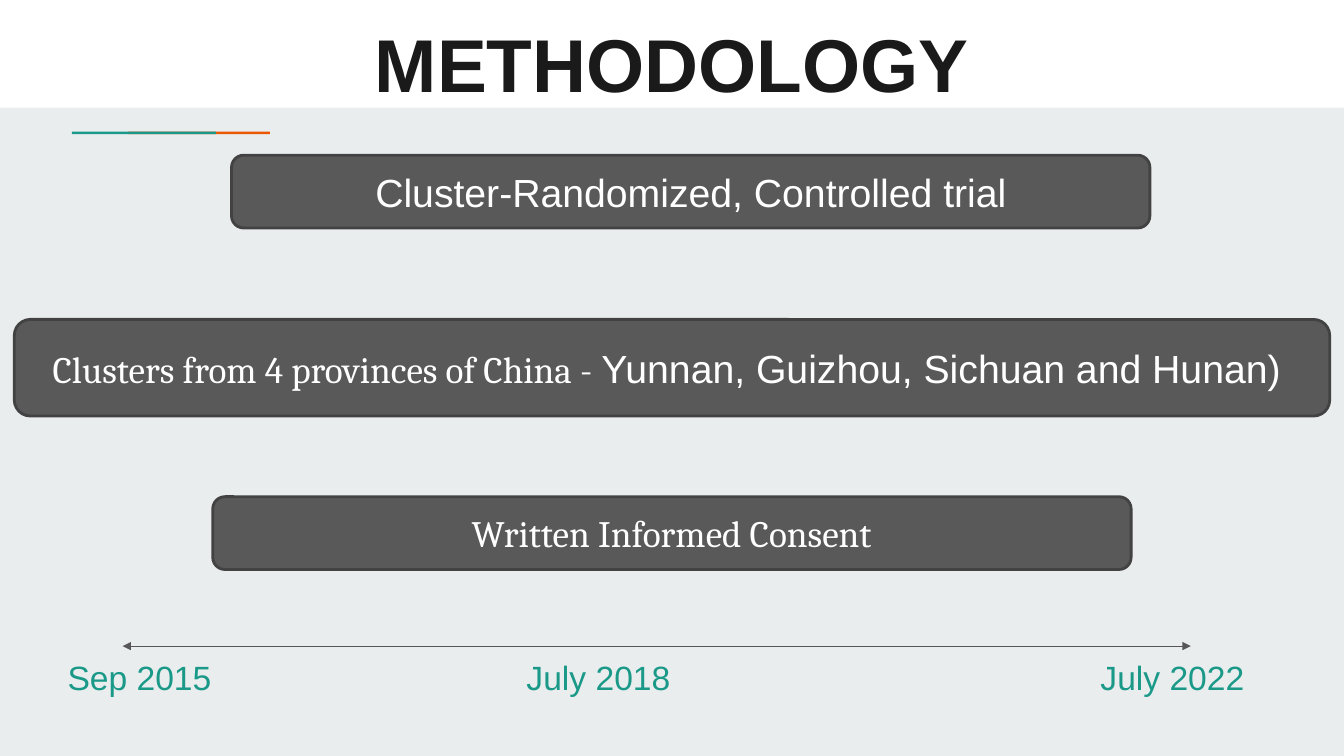
"""Build the methodology slide with its three steps and the study timeline."""
from dataclasses import dataclass
from lxml.etree import SubElement
from pptx import Presentation
from pptx.dml.color import RGBColor
from pptx.enum.shapes import MSO_CONNECTOR as Link, MSO_SHAPE as Form
from pptx.enum.text import MSO_ANCHOR as Anchor, PP_ALIGN as Align
from pptx.oxml.ns import qn
from pptx.shapes.autoshape import Shape
from pptx.slide import Slide
from pptx.text.text import TextFrame
from pptx.util import Pt

WHITE = RGBColor(0xFF, 0xFF, 0xFF)
MIST = RGBColor(0xE9, 0xED, 0xEE)
INK = RGBColor(0x1A, 0x1A, 0x1A)
TEAL = RGBColor(0x1A, 0x99, 0x88)
ORANGE = RGBColor(0xEB, 0x56, 0x00)
GREY = RGBColor(0x59, 0x59, 0x59)
EDGE = RGBColor(0x42, 0x42, 0x42)
ARROW = RGBColor(0x57, 0x57, 0x57)


@dataclass(frozen=True)
class Box:
    left: float
    top: float
    width: float
    height: float


@dataclass(frozen=True)
class Run:
    text: str
    size: float
    font: str = "Arial"
    bold: bool = False


@dataclass(frozen=True)
class Bar:
    box: Box
    fill: RGBColor


@dataclass(frozen=True)
class Step:
    box: Box
    runs: tuple[Run, ...]


@dataclass(frozen=True)
class Date:
    left: float
    text: str


BARS = (
    Bar(Box(0, 0, 960, 77), WHITE),
    Bar(Box(91.4, 94, 101.4, 1.9), ORANGE),
    Bar(Box(51.4, 94, 102.9, 1.9), TEAL),
)
STEPS = (
    Step(Box(165.4, 110.9, 656, 52),
         (Run("Cluster-Randomized, Controlled trial", 28),)),
    Step(Box(10.2, 228.2, 939.6, 69),
         (Run("Clusters from 4 provinces of China - ", 26.6, "Cambria"),
          Run("Yunnan, Guizhou, Sichuan and Hunan) ", 28))),
    Step(Box(152, 354.8, 656, 52),
         (Run("Written Informed Consent", 26.6, "Cambria"),)),
)
DATES = (Date(41.2, "Sep 2015"), Date(369, "July 2018"), Date(779, "July 2022"))


def span(box: Box) -> tuple[Pt, Pt, Pt, Pt]:
    """Turn a box into lengths in points."""
    return Pt(box.left), Pt(box.top), Pt(box.width), Pt(box.height)


def write(frame: TextFrame, runs: tuple[Run, ...], color: RGBColor, align: Align) -> None:
    """Fill the first paragraph run by run."""
    frame.word_wrap = True
    para = frame.paragraphs[0]
    para.alignment = align
    for part in runs:
        run = para.add_run()
        run.text = part.text
        font = run.font
        font.size, font.name, font.bold = Pt(part.size), part.font, part.bold
        font.color.rgb = color


def panel(slide: Slide, form: Form, box: Box, fill: RGBColor) -> Shape:
    """Add a flat filled shape with no outline."""
    shape = slide.shapes.add_shape(form, *span(box))
    shape.shadow.inherit = False
    shape.fill.solid()
    shape.fill.fore_color.rgb = fill
    shape.line.fill.background()
    return shape


def title(slide: Slide) -> None:
    """Add the slide heading."""
    frame = slide.shapes.add_textbox(*span(Box(76.3, 0, 807, 86.4))).text_frame
    frame.margin_left = frame.margin_right = Pt(9.6)
    frame.margin_top = frame.margin_bottom = Pt(9.6)
    frame.vertical_anchor = Anchor.BOTTOM
    write(frame, (Run("METHODOLOGY", 53.4, bold=True),), INK, Align.CENTER)


def card(slide: Slide, step: Step) -> None:
    """Add one rounded step."""
    shape = panel(slide, Form.ROUNDED_RECTANGLE, step.box, GREY)
    shape.line.color.rgb = EDGE
    shape.line.width = Pt(2)
    shape.text_frame.vertical_anchor = Anchor.MIDDLE
    write(shape.text_frame, step.runs, WHITE, Align.CENTER)


def axis(slide: Slide) -> None:
    """Add the timeline with an arrowhead at each end."""
    line = slide.shapes.add_connector(
        Link.STRAIGHT, Pt(87.6), Pt(461.5), Pt(850.6), Pt(461.5))
    line.line.color.rgb = ARROW
    line.line.width = Pt(0.75)
    for end in ("a:headEnd", "a:tailEnd"):
        SubElement(line.line._get_or_add_ln(), qn(end), type="triangle")
    SubElement(line._element.spPr, qn("a:effectLst"))


def label(slide: Slide, date: Date) -> None:
    """Add one date below the timeline."""
    box = Box(date.left, 466, 124, 36)
    frame = slide.shapes.add_textbox(*span(box)).text_frame
    write(frame, (Run(date.text, 24),), TEAL, Align.LEFT)


def main() -> None:
    """Draw and save the slide."""
    deck = Presentation()
    deck.slide_width, deck.slide_height = Pt(960), Pt(540)
    slide = deck.slides.add_slide(deck.slide_layouts[6])
    slide.background.fill.solid()
    slide.background.fill.fore_color.rgb = MIST
    for bar in BARS:
        panel(slide, Form.RECTANGLE, bar.box, bar.fill)
    title(slide)
    for step in STEPS:
        card(slide, step)
    axis(slide)
    for date in DATES:
        label(slide, date)
    deck.save("out.pptx")


if __name__ == "__main__":
    main()
